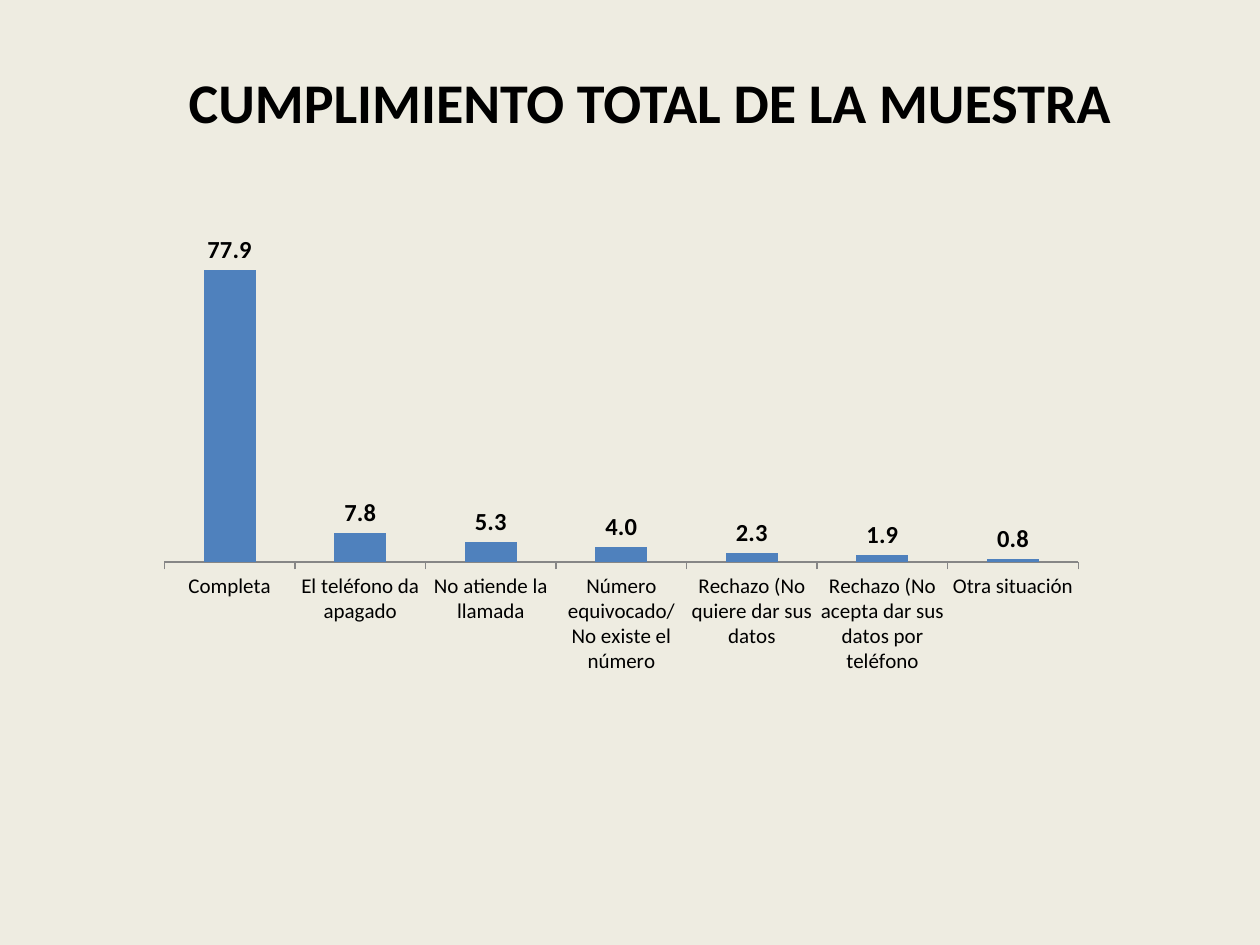
from dataclasses import dataclass

from pptx import Presentation
from pptx.chart.data import CategoryChartData
from pptx.dml.color import RGBColor
from pptx.enum.chart import XL_CHART_TYPE, XL_LABEL_POSITION, XL_TICK_MARK
from pptx.enum.text import MSO_ANCHOR, PP_ALIGN
from pptx.oxml import parse_xml
from pptx.oxml.ns import nsdecls
from pptx.util import Pt

BACKGROUND = RGBColor(0xEE, 0xEC, 0xE1)
BLACK = RGBColor(0, 0, 0)
BAR_BLUE = RGBColor(0x4F, 0x81, 0xBD)
AXIS_GRAY = RGBColor(0x86, 0x86, 0x86)

TITLE_FORMAT = {"name": "Calibri", "size": Pt(32), "bold": True}
CHART_FORMAT = {"name": "Calibri", "size": Pt(10)}
AXIS_FORMAT = {"name": "Calibri", "size": Pt(12)}
LABEL_FORMAT = {"name": "Calibri", "size": Pt(14), "bold": True}
PLOT_AREA = {"x": 0.011, "y": 0.044, "w": 0.96, "h": 0.495}


@dataclass
class Outcome:
    name: str
    percent: float


OUTCOMES = [
    Outcome("Completa", 77.9),
    Outcome("El teléfono da apagado", 7.8),
    Outcome("No atiende la llamada", 5.3),
    Outcome("Número equivocado/No existe el número", 4.0),
    Outcome("Rechazo (No quiere dar sus datos", 2.3),
    Outcome("Rechazo (No acepta dar sus datos por teléfono", 1.9),
    Outcome("Otra situación", 0.8),
]


def set_attrs(target, values: dict) -> None:
    for name, value in values.items():
        setattr(target, name, value)


def format_font(font, values: dict) -> None:
    set_attrs(font, values)
    font.color.rgb = BLACK


def add_title(s, text: str) -> None:
    sp = s.shapes.add_textbox(Pt(65.5), Pt(0), Pt(612), Pt(116))
    tf = sp.text_frame
    set_attrs(tf, {"word_wrap": True, "vertical_anchor": MSO_ANCHOR.MIDDLE})
    p = tf.paragraphs[0]
    p.alignment = PP_ALIGN.CENTER
    r = p.add_run()
    r.text = text
    format_font(r.font, TITLE_FORMAT)


def set_plot_layout(chart, box: dict) -> None:
    plot_area = chart.element.xpath("c:chart/c:plotArea")[0]
    for old in plot_area.xpath("c:layout"):
        plot_area.remove(old)
    modes = "".join(f'<c:{k}Mode val="edge"/>' for k in "xy")
    sizes = "".join(f'<c:{k} val="{v}"/>' for k, v in box.items())
    plot_area.insert(0, parse_xml(
        f'<c:layout {nsdecls("c")}><c:manualLayout><c:layoutTarget val="inner"/>'
        f"{modes}{sizes}</c:manualLayout></c:layout>"))


def add_outcome_chart(s, outcomes: list[Outcome]) -> None:
    data = CategoryChartData(number_format="#,##0.0")
    data.categories = [o.name for o in outcomes]
    data.add_series("Series 1", [o.percent for o in outcomes])
    chart = s.shapes.add_chart(XL_CHART_TYPE.COLUMN_CLUSTERED, Pt(88), Pt(111.5),
                               Pt(544), Pt(389), data).chart
    set_attrs(chart, {"has_title": False, "has_legend": False})
    format_font(chart.font, CHART_FORMAT)
    set_plot_layout(chart, PLOT_AREA)

    # Axes
    set_attrs(chart.value_axis, {"visible": False, "has_major_gridlines": False,
                                 "minimum_scale": 0, "maximum_scale": 90})
    axis = chart.category_axis
    set_attrs(axis, {"has_major_gridlines": False,
                     "major_tick_mark": XL_TICK_MARK.OUTSIDE})
    format_font(axis.tick_labels.font, AXIS_FORMAT)
    axis.format.line.color.rgb = AXIS_GRAY
    axis.format.line.width = Pt(0.75)

    # Columns and their values
    plot = chart.plots[0]
    set_attrs(plot, {"gap_width": 150, "vary_by_categories": False,
                     "has_data_labels": True})
    fill = plot.series[0].format.fill
    fill.solid()
    fill.fore_color.rgb = BAR_BLUE
    labels = plot.data_labels
    set_attrs(labels, {"show_value": True, "number_format": "#,##0.0",
                       "number_format_is_linked": False,
                       "position": XL_LABEL_POSITION.OUTSIDE_END})
    format_font(labels.font, LABEL_FORMAT)


def main() -> None:
    prs = Presentation()
    set_attrs(prs, {"slide_width": Pt(720), "slide_height": Pt(540)})
    s = prs.slides.add_slide(prs.slide_layouts[6])
    s.background.fill.solid()
    s.background.fill.fore_color.rgb = BACKGROUND
    add_title(s, "CUMPLIMIENTO TOTAL DE LA MUESTRA")
    add_outcome_chart(s, OUTCOMES)
    prs.save("out.pptx")


if __name__ == "__main__":
    main()
